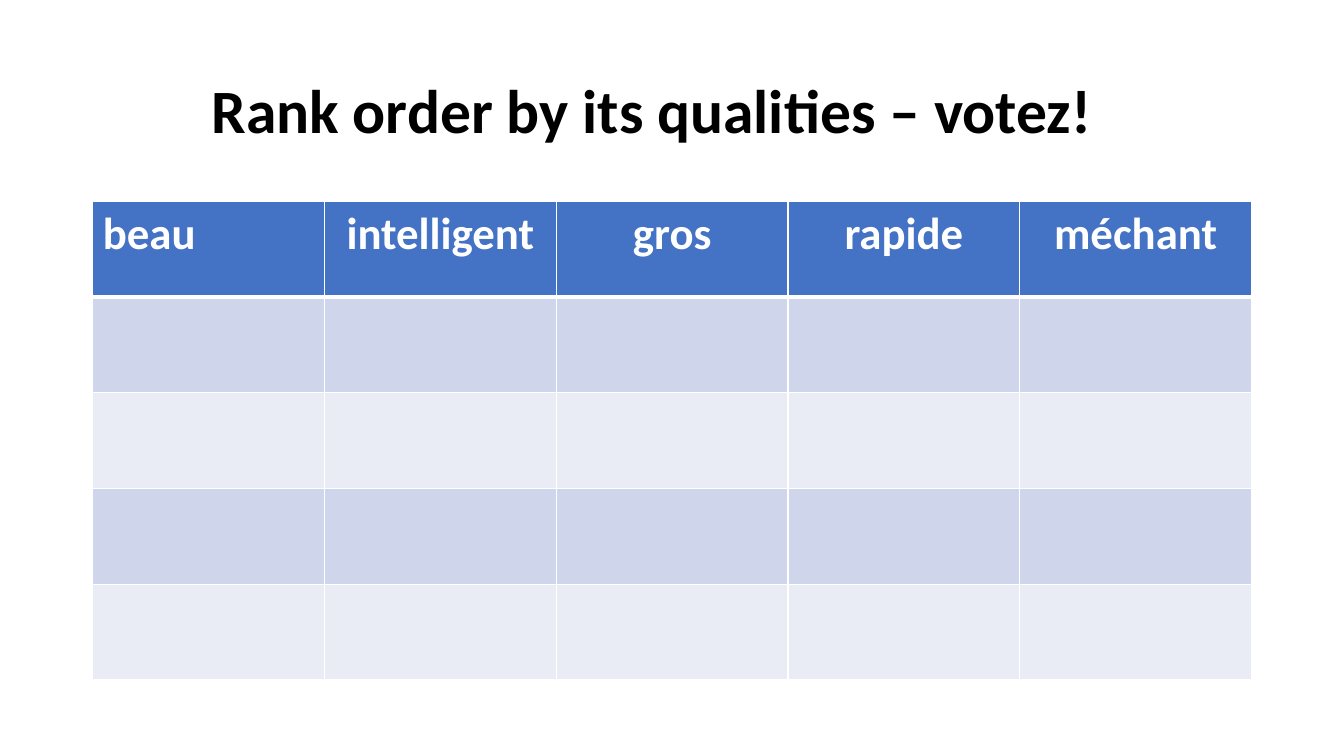
"""Build a slide with a voting table that ranks by qualities."""
from lxml.etree import SubElement
from pptx import Presentation
from pptx.dml.color import RGBColor
from pptx.enum.text import MSO_ANCHOR, PP_ALIGN
from pptx.oxml.ns import qn
from pptx.util import Cm, Pt

TITLE = "Rank order by its qualities – votez!"
QUALITIES = [
    ("beau", PP_ALIGN.LEFT),
    ("intelligent", PP_ALIGN.CENTER),
    ("gros", PP_ALIGN.CENTER),
    ("rapide", PP_ALIGN.CENTER),
    ("méchant", PP_ALIGN.CENTER),
]
VOTE_ROWS = 4

FONT = "Calibri"
BLACK = RGBColor(0x00, 0x00, 0x00)
WHITE = RGBColor(0xFF, 0xFF, 0xFF)
HEADER_BLUE = RGBColor(0x44, 0x72, 0xC4)
BANDS = [RGBColor(0xCF, 0xD5, 0xEA), RGBColor(0xE9, 0xEB, 0xF5)]

COLUMN_WIDTH = Cm(5.84)
ROW_HEIGHT = Cm(2.41)


def style_text(paragraph, size, color):
    paragraph.font.name = FONT
    paragraph.font.size = Pt(size)
    paragraph.font.bold = True
    paragraph.font.color.rgb = color


def add_border(cell, side, width):
    properties = cell._tc.get_or_add_tcPr()
    line = SubElement(properties, qn(f"a:ln{side}"), w=str(Pt(width)))
    fill = SubElement(line, qn("a:solidFill"))
    SubElement(fill, qn("a:srgbClr"), val=str(WHITE))


def add_title(slide):
    box = slide.shapes.add_textbox(Cm(5.08), Cm(1.02), Cm(26.47), Cm(3.68))
    frame = box.text_frame
    frame.word_wrap = True
    frame.vertical_anchor = MSO_ANCHOR.MIDDLE
    paragraph = frame.paragraphs[0]
    paragraph.text = TITLE
    paragraph.line_spacing = 0.9
    style_text(paragraph, 44, BLACK)


def add_vote_table(slide):
    row_count, column_count = VOTE_ROWS + 1, len(QUALITIES)
    table = slide.shapes.add_table(
        row_count, column_count, Cm(2.34), Cm(5.08),
        COLUMN_WIDTH * column_count, ROW_HEIGHT * row_count).table
    for column in table.columns:
        column.width = COLUMN_WIDTH
    for index, row in enumerate(table.rows):
        row.height = ROW_HEIGHT
        for cell in row.cells:
            for side in "LRTB":
                header_edge = (index, side) in [(0, "B"), (1, "T")]
                add_border(cell, side, 3 if header_edge else 1)
            cell.fill.solid()
            cell.fill.fore_color.rgb = BANDS[(index - 1) % 2] if index else HEADER_BLUE
    for cell, (quality, alignment) in zip(table.rows[0].cells, QUALITIES):
        paragraph = cell.text_frame.paragraphs[0]
        paragraph.text = quality
        paragraph.alignment = alignment
        style_text(paragraph, 32, WHITE)


def main():
    presentation = Presentation()
    presentation.slide_width = Cm(33.87)
    presentation.slide_height = Cm(19.05)
    slide = presentation.slides.add_slide(presentation.slide_layouts[6])
    add_title(slide)
    add_vote_table(slide)
    presentation.save("out.pptx")


if __name__ == "__main__":
    main()
